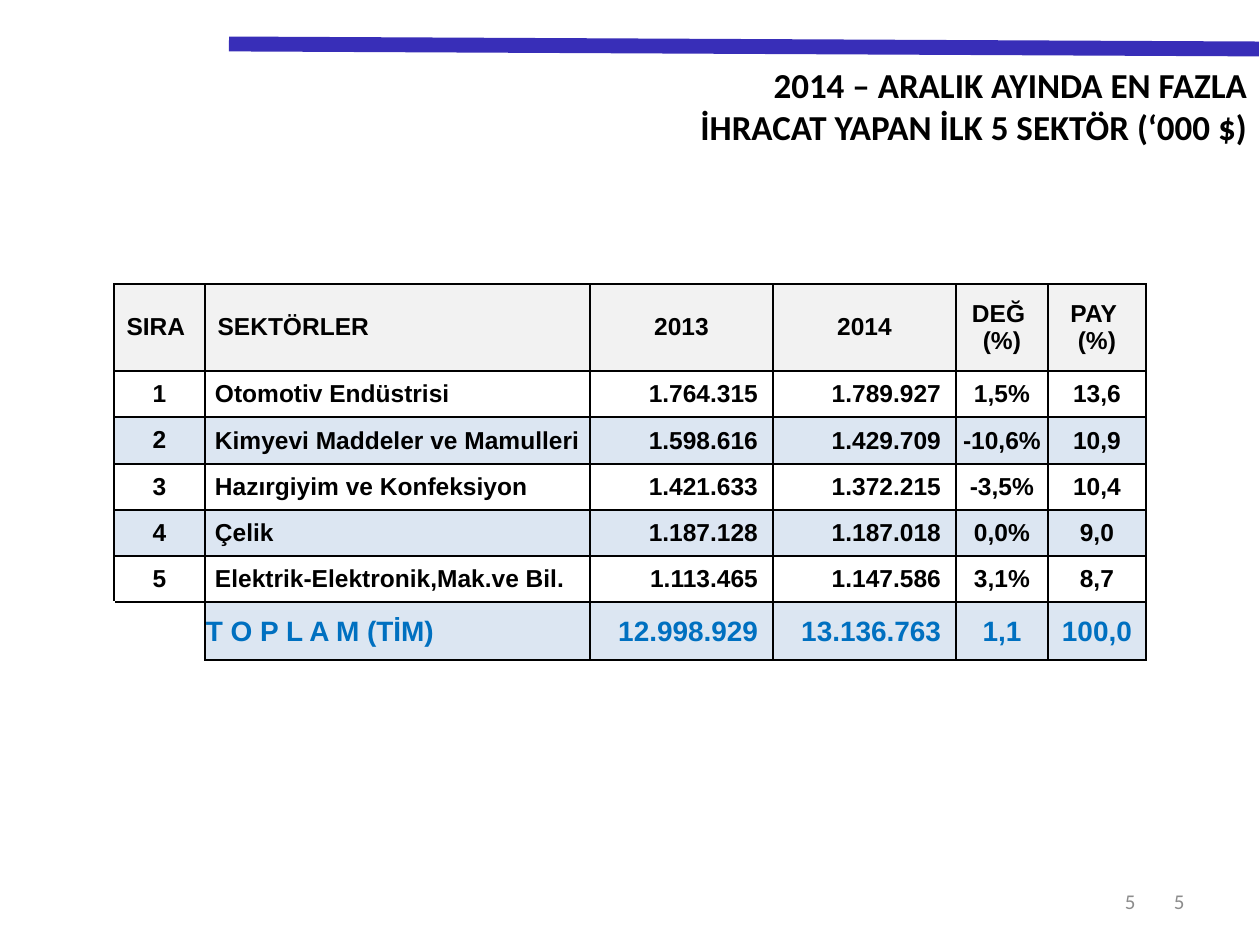
from lxml import etree
from pptx import Presentation
from pptx.dml.color import RGBColor
from pptx.enum.shapes import MSO_CONNECTOR
from pptx.enum.text import MSO_ANCHOR, MSO_AUTO_SIZE, PP_ALIGN
from pptx.oxml.ns import qn
from pptx.util import Pt

LEFT, CENTER, RIGHT = PP_ALIGN.LEFT, PP_ALIGN.CENTER, PP_ALIGN.RIGHT
TOP, MIDDLE = MSO_ANCHOR.TOP, MSO_ANCHOR.MIDDLE
STRAIGHT = MSO_CONNECTOR.STRAIGHT
NO_AUTOFIT = MSO_AUTO_SIZE.NONE
TITLE_ONLY = 5
COLORS = {"text": "000000", "bar": "382EB8", "number": "8C8C8C",
          "header": "F2F2F2", "band": "DCE6F2", "total": "0070C0"}
HEADING, BODY = "Calibri", "Arial"


def px(n):
    return round(n * 914400 / 126)


def rgb(name):
    return RGBColor.from_string(COLORS[name])


class Deck:
    def __init__(self, width, height):
        self.prs = Presentation()
        self.prs.slide_width, self.prs.slide_height = px(width), px(height)
        self.s = self.prs.slides.add_slide(self.prs.slide_layouts[TITLE_ONLY])

    def set_text(self, tf, text, font, size, color, align, bold=True):
        tf.text = text
        for p in tf.paragraphs:
            p.alignment = align
            for r in p.runs:
                r.font.name, r.font.size, r.font.bold = font, Pt(size), bold
                r.font.color.rgb = rgb(color)

    def title(self, x, y, w, h, text):
        sp = self.s.shapes.title
        sp.left, sp.top, sp.width, sp.height = map(px, (x, y, w, h))
        tf = sp.text_frame
        tf.auto_size, tf.vertical_anchor = NO_AUTOFIT, TOP
        self.set_text(tf, text, HEADING, 20, "text", RIGHT)

    def text(self, x, y, w, h, text):
        tf = self.s.shapes.add_textbox(*map(px, (x, y, w, h))).text_frame
        tf.word_wrap, tf.vertical_anchor = True, MIDDLE
        self.set_text(tf, text, HEADING, 12, "number", RIGHT, bold=False)

    def line(self, x1, y1, x2, y2, color, width):
        ln = self.s.shapes.add_connector(STRAIGHT, *map(px, (x1, y1, x2, y2)))
        ln.line.color.rgb, ln.line.width = rgb(color), Pt(width)
        etree.SubElement(ln._element.spPr, qn("a:effectLst"))

    def table(self, x, y, cols, rows):
        frame = self.s.shapes.add_table(len(rows), len(cols), px(x), px(y),
                                        px(sum(cols)), px(sum(rows)))
        tbl = frame.table
        tbl.first_row = tbl.horz_banding = False
        for col, w in zip(tbl.columns, cols):
            col.width = px(w)
        for row, h in zip(tbl.rows, rows):
            row.height = px(h)
        return tbl

    def cell(self, cell, text, align, size=14, color="text", fill=None,
             margins=None, sides="LRTB"):
        cell.vertical_anchor = MIDDLE
        if margins:
            (cell.margin_left, cell.margin_top,
             cell.margin_right, cell.margin_bottom) = map(px, margins)
        self.set_text(cell.text_frame, text, BODY, size, color, align)
        tcPr = cell._tc.get_or_add_tcPr()
        for side in sides:
            ln = etree.SubElement(tcPr, qn(f"a:ln{side}"), w=str(Pt(1)))
            solid = etree.SubElement(ln, qn("a:solidFill"))
            etree.SubElement(solid, qn("a:srgbClr"), val=COLORS["text"])
        if fill:
            cell.fill.solid()
            cell.fill.fore_color.rgb = rgb(fill)
        else:
            cell.fill.background()


HEADERS = ["SIRA", "SEKTÖRLER", "2013", "2014", "DEĞ \n(%)", " PAY  \n(%)"]
SECTORS = [
    ["1", "Otomotiv Endüstrisi", "1.764.315", "1.789.927", "1,5%", "13,6"],
    ["2", "Kimyevi Maddeler ve Mamulleri", "1.598.616", "1.429.709", "-10,6%", "10,9"],
    ["3", "Hazırgiyim ve Konfeksiyon", "1.421.633", "1.372.215", "-3,5%", "10,4"],
    ["4", "Çelik", "1.187.128", "1.187.018", "0,0%", "9,0"],
    ["5", "Elektrik-Elektronik,Mak.ve Bil.", "1.113.465", "1.147.586", "3,1%", "8,7"],
]
TOTAL = ["", "T O P L A M (TİM)", "12.998.929", "13.136.763", "1,1", "100,0"]

HEADER_ALIGN = [LEFT, LEFT] + [CENTER] * 4
BODY_ALIGN = [CENTER, LEFT, RIGHT, RIGHT, CENTER, CENTER]
NAME, NUMBER, TIGHT = (10, 1, 1, 0), (1, 1, 15, 0), (1, 1, 1, 0)
BODY_MARGINS = [None, NAME, NUMBER, NUMBER, TIGHT, TIGHT]
TOTAL_MARGINS = [None, TIGHT, NUMBER, NUMBER, TIGHT, TIGHT]


def main():
    deck = Deck(1260, 945)

    # Top bar, title and slide numbers
    deck.line(229, 44, 1259, 49, "bar", 8.5)
    deck.title(134, 57, 1126, 97,
               "2014 – ARALIK AYINDA EN FAZLA\nİHRACAT YAPAN İLK 5 SEKTÖR (‘000 $)")
    deck.text(903, 876, 294, 50, "5")
    deck.text(883, 876, 265, 50, "5")

    # Export table
    tbl = deck.table(114, 284, [91, 385, 183, 183, 92, 98],
                     [87, 46, 47, 46, 46, 46, 58])
    for c, text in enumerate(HEADERS):
        deck.cell(tbl.cell(0, c), text, HEADER_ALIGN[c], fill="header")
    for r, sector in enumerate(SECTORS, 1):
        fill = "band" if r % 2 == 0 else None
        for c, text in enumerate(sector):
            deck.cell(tbl.cell(r, c), text, BODY_ALIGN[c], fill=fill,
                      margins=BODY_MARGINS[c])

    # Total row, with an open first cell
    last = len(SECTORS) + 1
    deck.cell(tbl.cell(last, 0), TOTAL[0], CENTER, sides="RT")
    for c, text in enumerate(TOTAL[1:], 1):
        deck.cell(tbl.cell(last, c), text, BODY_ALIGN[c], 16, "total", "band",
                  TOTAL_MARGINS[c])

    deck.prs.save("out.pptx")


if __name__ == "__main__":
    main()
